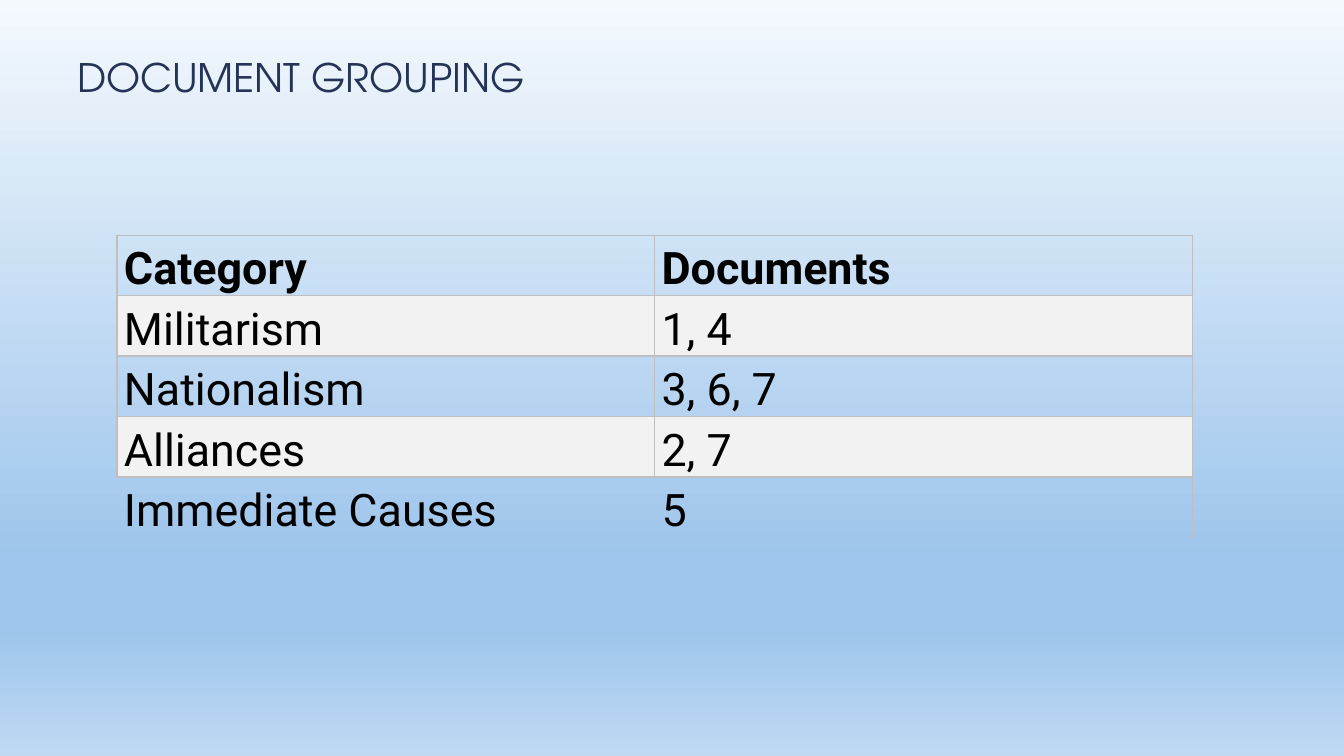
from lxml.etree import SubElement
from pptx import Presentation
from pptx.dml.color import RGBColor
from pptx.enum.text import MSO_ANCHOR, MSO_AUTO_SIZE, PP_ALIGN
from pptx.oxml.ns import qn
from pptx.util import Inches, Pt

WIDTH, HEIGHT = Inches(13.33), Inches(7.5)
NAVY = RGBColor(0x25, 0x33, 0x56)
BLACK = RGBColor(0x00, 0x00, 0x00)
BAND = RGBColor(0xF2, 0xF2, 0xF2)
BORDER = RGBColor(0xBF, 0xBF, 0xBF)
SKY = [
    (0, RGBColor(0xF4, 0xF9, 0xFD)),
    (74, RGBColor(0x9E, 0xC5, 0xEC)),
    (83, RGBColor(0x9E, 0xC5, 0xEC)),
    (100, RGBColor(0xBF, 0xD9, 0xF3)),
]
GROUPING = [
    ("Category", "Documents"),
    ("Militarism", "1, 4"),
    ("Nationalism", "3, 6, 7"),
    ("Alliances", "2, 7"),
    ("Immediate Causes", "5"),
]


def add_color(parent, color):
    SubElement(parent, qn("a:srgbClr"), val=str(color))


def paint_background(slide):
    fill = slide.background.fill
    fill.gradient()
    fill.gradient_angle = 270
    stops = next(slide.element.iter(qn("a:gsLst")))
    for stop in list(stops):
        stops.remove(stop)
    for percent, color in SKY:
        add_color(SubElement(stops, qn("a:gs"), pos=str(percent * 1000)), color)


def add_run(paragraph, text, font_name, size, color, bold=False):
    run = paragraph.add_run()
    run.text = text
    run.font.name = font_name
    run.font.size = Pt(size)
    run.font.color.rgb = color
    run.font.bold = bold


def set_title(slide, text):
    title = slide.shapes.title
    title.left, title.top = int(WIDTH * 0.05), int(HEIGHT * 0.023)
    title.width, title.height = int(WIDTH * 0.875), int(HEIGHT * 0.117)
    frame = title.text_frame
    frame.word_wrap = True
    frame.auto_size = MSO_AUTO_SIZE.NONE
    frame.vertical_anchor = MSO_ANCHOR.BOTTOM
    heading = frame.paragraphs[0]
    heading.alignment = PP_ALIGN.LEFT
    heading.line_spacing = 0.9
    add_run(heading, text, "TeX Gyre Adventor", 28, NAVY)


def add_borders(cell, sides):
    properties = cell._tc.get_or_add_tcPr()
    for side in "LRTB":
        line = SubElement(properties, qn(f"a:ln{side}"), w=str(Pt(1)))
        if side in sides:
            add_color(SubElement(line, qn("a:solidFill")), BORDER)
        else:
            SubElement(line, qn("a:noFill"))


def format_cell(cell, text, header, banded, sides):
    cell.margin_left = cell.margin_right = Inches(0.07)
    cell.margin_top = cell.margin_bottom = 0
    add_borders(cell, sides)
    if banded:
        cell.fill.solid()
        cell.fill.fore_color.rgb = BAND
    else:
        cell.fill.background()
    entry = cell.text_frame.paragraphs[0]
    entry.line_spacing = 1.15
    entry.space_after = Pt(8)
    add_run(entry, text, "Roboto", 32, BLACK, header)


def add_grouping_table(slide, rows):
    grouping = slide.shapes.add_table(
        len(rows), len(rows[0]), int(WIDTH * 0.087), int(HEIGHT * 0.311),
        int(WIDTH * 0.8), int(HEIGHT * 0.4)).table
    grouping.first_row = grouping.horz_banding = False
    last_row, last_column = len(rows) - 1, len(rows[0]) - 1
    for r, row in enumerate(rows):
        for c, text in enumerate(row):
            sides = "LRTB"
            if r == last_row:
                sides = "TR" if c == last_column else "T"
            format_cell(grouping.cell(r, c), text, r == 0, r % 2 == 1, sides)


def main():
    deck = Presentation()
    deck.slide_width, deck.slide_height = WIDTH, HEIGHT
    slide = deck.slides.add_slide(deck.slide_layouts[5])
    paint_background(slide)
    set_title(slide, "DOCUMENT GROUPING")
    add_grouping_table(slide, GROUPING)
    deck.save("out.pptx")


if __name__ == "__main__":
    main()
